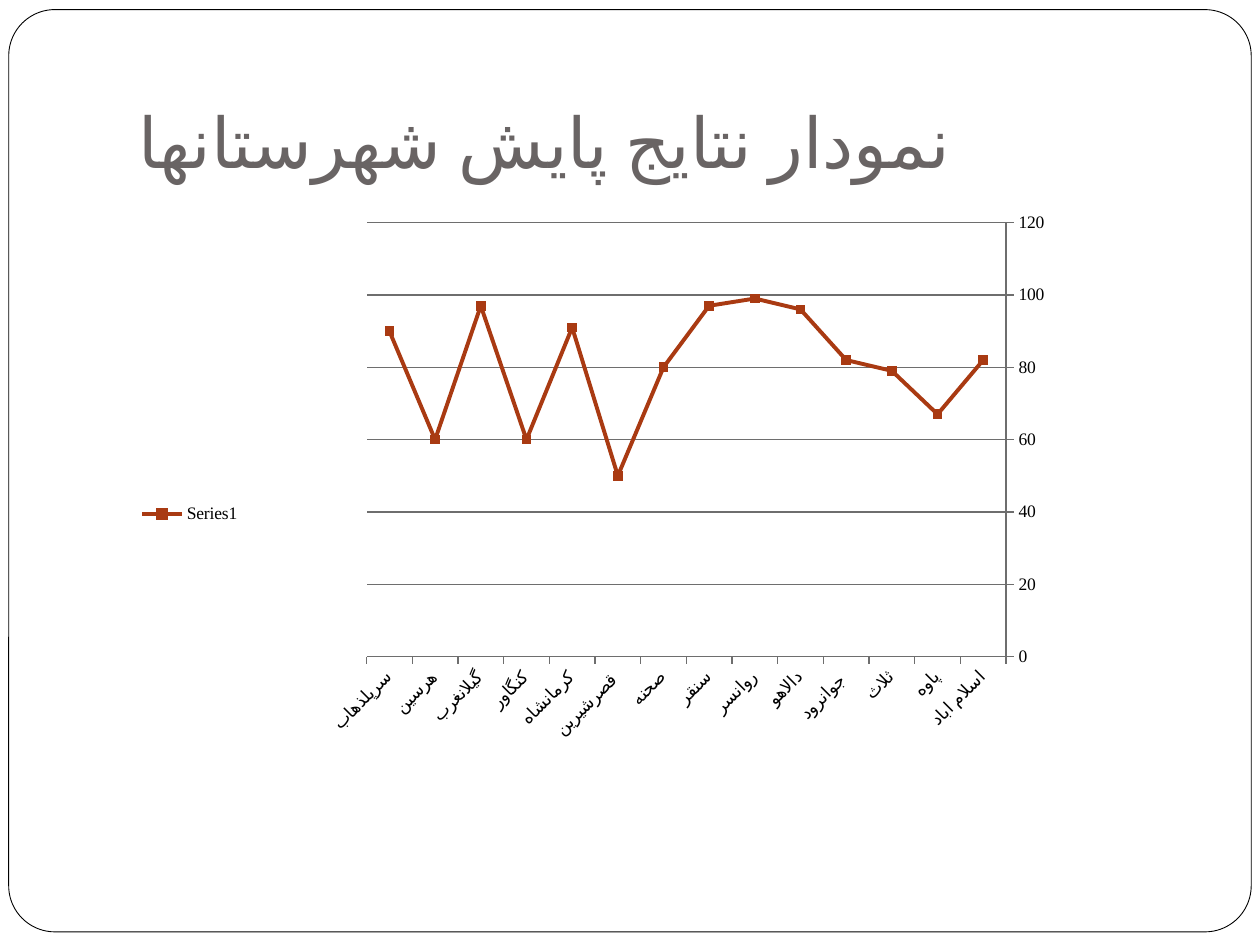
from dataclasses import dataclass
from lxml.etree import SubElement as Sub
from pptx import Presentation
from pptx.chart.data import CategoryChartData as Data
from pptx.dml.color import RGBColor as Rgb
from pptx.enum.chart import XL_CHART_TYPE as Kind, XL_LEGEND_POSITION as Side
from pptx.enum.chart import XL_MARKER_STYLE as Mark, XL_TICK_MARK as Tick
from pptx.enum.shapes import MSO_SHAPE as Form
from pptx.enum.text import MSO_ANCHOR as Anchor, MSO_AUTO_SIZE as Fit, PP_ALIGN as Align
from pptx.oxml.ns import qn
from pptx.util import Pt

HEAD = "نمودار نتایج پایش شهرستانها"
NAME = "Series1"
ROWS = [
    ("اسلام اباد", 82), ("پاوه", 67), ("ثلاث", 79), ("جوانرود ", 82),
    ("دالاهو", 96), ("روانسر", 99), ("سنقر", 97), ("صحنه", 80),
    ("قصرشیرین ", 50), ("کرمانشاه", 91), ("کنگاور", 60),
    ("گیلانغرب", 97), ("هرسین", 60), ("سرپلذهاب", 90),
]
FRAME = (5, 5.5, 710, 527)
TITLE = (72, 21.6, 612, 90)
CHART = (72, 113.76, 612, 360)
PLOT = (137.5, 13.5, 365.5, 248)


@dataclass
class Theme:
    paper: Rgb = Rgb(255, 255, 255)
    ink: Rgb = Rgb(0, 0, 0)
    head: Rgb = Rgb.from_string("696464")
    grid: Rgb = Rgb.from_string("6E6E6E")
    line: Rgb = Rgb.from_string("D34817")
    shade: float = -0.2
    face: str = "Roboto"
    serif: str = "Times New Roman"
    big: int = 40
    small: int = 10


theme = Theme()


def box(spot):
    return [Pt(n) for n in spot]


def paint(fill, tone, shade=0):
    fill.solid()
    fill.fore_color.rgb = tone
    if shade:
        fill.fore_color.brightness = shade


def add_frame(slide):
    card = slide.shapes.add_shape(Form.ROUNDED_RECTANGLE, *box(FRAME))
    card.adjustments[0] = 0.05
    card.shadow.inherit = False
    paint(card.fill, theme.paper)
    paint(card.line.fill, theme.ink)
    card.line.width = Pt(0.5)
    slide.shapes._spTree.insert(2, card._element)


def add_title(slide):
    head = slide.shapes.title
    head.left, head.top, head.width, head.height = box(TITLE)
    text = head.text_frame
    text.auto_size = Fit.NONE
    text.word_wrap = True
    text.vertical_anchor = Anchor.BOTTOM
    text.margin_left = text.margin_right = text.margin_bottom = Pt(7.2)
    text.margin_top = Pt(3.6)
    para = text.paragraphs[0]
    para.alignment = Align.LEFT
    para._p.get_or_add_pPr().set("rtl", "1")
    run = para.add_run()
    run.text = HEAD
    run.font.size = Pt(theme.big)
    run.font.name = theme.face
    run.font.color.rgb = theme.head
    run._r.get_or_add_rPr().set("lang", "fa-IR")


def place_plot(chart):
    area = chart._chartSpace.chart.plotArea
    for old in area.findall(qn("c:layout")):
        area.remove(old)
    lay = Sub(area, qn("c:layout"))
    area.insert(0, lay)
    man = Sub(lay, qn("c:manualLayout"))
    Sub(man, qn("c:layoutTarget"), val="inner")
    for key in "xy":
        Sub(man, qn(f"c:{key}Mode"), val="edge")
    for key, part, whole in zip("xywh", PLOT, CHART[2:] * 2):
        Sub(man, qn(f"c:{key}"), val=str(part / whole))


def add_chart(slide):
    data = Data()
    data.categories = [town for town, _ in ROWS]
    data.add_series(NAME, [score for _, score in ROWS])
    chart = slide.shapes.add_chart(Kind.LINE_MARKERS, *box(CHART), data).chart
    chart.has_title = False
    chart.font.size = Pt(theme.small)
    chart.font.name = theme.serif
    chart.font.color.rgb = theme.ink
    chart.has_legend = True
    chart.legend.position = Side.LEFT
    chart.legend.include_in_layout = False
    place_plot(chart)

    towns, scores = chart.category_axis, chart.value_axis
    towns.reverse_order = True
    scores.minimum_scale, scores.maximum_scale, scores.major_unit = 0, 120, 20
    scores.has_major_gridlines = True
    for axis in (towns, scores):
        axis.major_tick_mark = Tick.OUTSIDE
        axis.minor_tick_mark = Tick.NONE
    for rule in (towns.format.line, scores.format.line, scores.major_gridlines.format.line):
        paint(rule.fill, theme.grid)
        rule.width = Pt(0.75)
    towns.tick_labels.font.size = Pt(theme.small)
    towns._element.find(qn("c:txPr")).find(qn("a:bodyPr")).set("rot", "-2700000")

    chart.plots[0].vary_by_categories = False
    line = chart.plots[0].series[0]
    line.smooth = False
    line.format.line.width = Pt(2.25)
    line.marker.style = Mark.SQUARE
    line.marker.size = 5
    look = line.marker.format
    for fill in (line.format.line.fill, look.fill, look.line.fill):
        paint(fill, theme.line, theme.shade)


def main():
    deck = Presentation()
    deck.slide_width, deck.slide_height = Pt(720), Pt(540)
    slide = deck.slides.add_slide(deck.slide_layouts[5])
    paint(slide.background.fill, theme.paper)
    add_frame(slide)
    add_title(slide)
    add_chart(slide)
    deck.save("out.pptx")


if __name__ == "__main__":
    main()
